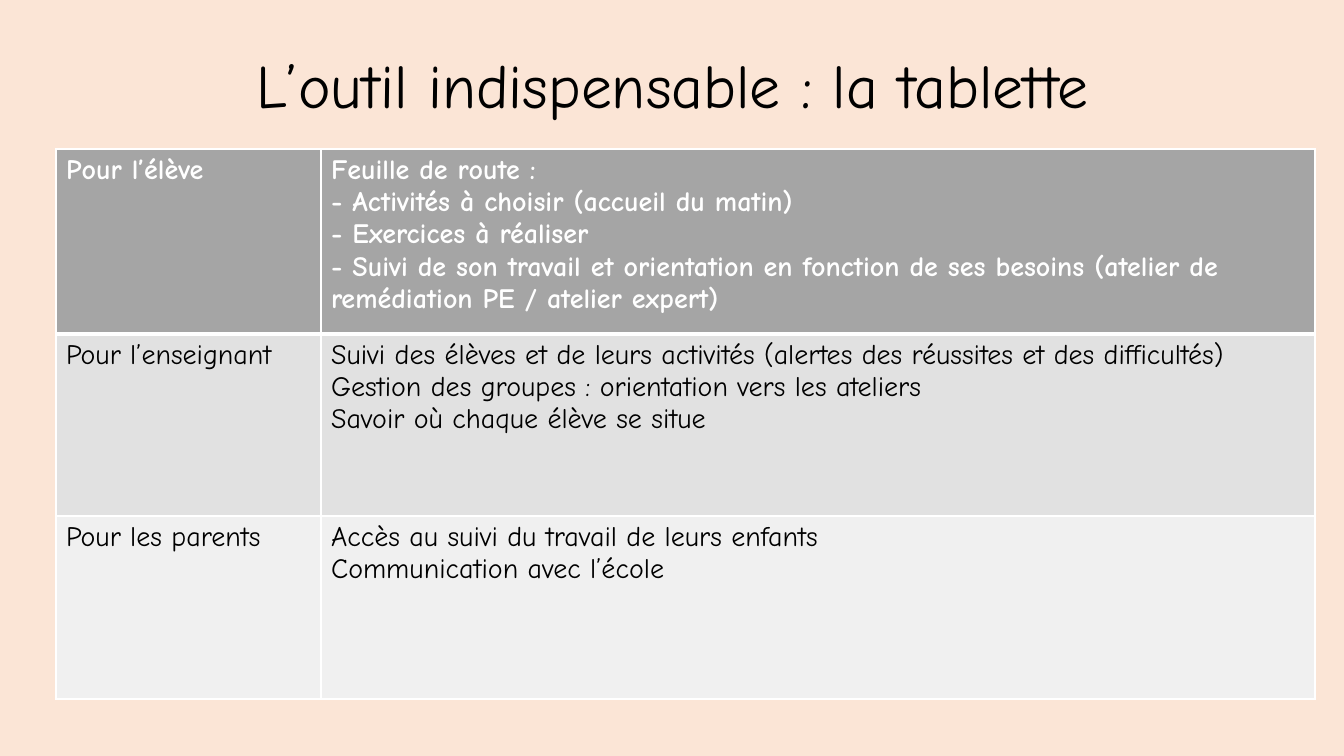
from lxml import etree
from pptx import Presentation
from pptx.dml.color import RGBColor
from pptx.enum.text import MSO_ANCHOR, PP_ALIGN
from pptx.oxml.ns import qn
from pptx.util import Pt

MIDDLE = MSO_ANCHOR.MIDDLE
CENTER = PP_ALIGN.CENTER
LEFT = PP_ALIGN.LEFT

TITLE = "L’outil indispensable : la tablette"
AUDIENCES = [
    ("Pour l’élève", [
        "Feuille de route :",
        "- Activités à choisir (accueil du matin)",
        "- Exercices à réaliser",
        "- Suivi de son travail et orientation en fonction de ses besoins "
        "(atelier de remédiation PE / atelier expert)",
    ]),
    ("Pour l’enseignant", [
        "Suivi des élèves et de leurs activités (alertes des réussites et des difficultés)",
        "Gestion des groupes : orientation vers les ateliers",
        "Savoir où chaque élève se situe",
    ]),
    ("Pour les parents", [
        "Accès au suivi du travail de leurs enfants",
        "Communication avec l’école",
    ]),
]
FONT = "Comic Neue"
BACKGROUND, BLACK, WHITE = "FBE5D6", "000000", "FFFFFF"
ROW_FILLS = ["A5A5A5", "E1E1E1", "F0F0F0"]
COLUMN_WIDTHS = [265, 994]
ROW_HEIGHTS = [185, 182, 183]
TABLE_LEFT, TABLE_TOP = 56, 149
EMU_PER_PX = 914400 / 100.8


def px(length):
    return round(length * EMU_PER_PX)


def color(value):
    return RGBColor.from_string(value)


def write(frame, lines, size=20, ink=BLACK, bold=False, align=LEFT, spacing=1.0):
    for index, line in enumerate(lines):
        para = frame.add_paragraph() if index else frame.paragraphs[0]
        para.alignment = align
        para.line_spacing = spacing
        span = para.add_run()
        span.text = line
        span.font.name = FONT
        span.font.size = Pt(size)
        span.font.bold = bold
        span.font.color.rgb = color(ink)


def add_borders(cell, widths):
    properties = cell._tc.get_or_add_tcPr()
    for side, width in widths.items():
        line = etree.SubElement(properties, qn(f"a:ln{side}"), w=str(Pt(width)))
        fill = etree.SubElement(line, qn("a:solidFill"))
        etree.SubElement(fill, qn("a:srgbClr"), val=WHITE)


deck = Presentation()
deck.slide_width, deck.slide_height = px(1344), px(756)
page = deck.slides.add_slide(deck.slide_layouts[5])
page.background.fill.solid()
page.background.fill.fore_color.rgb = color(BACKGROUND)

title = page.shapes.title
title.left, title.top, title.width, title.height = px(93), px(16), px(1159), px(146)
title.text_frame.vertical_anchor = MIDDLE
write(title.text_frame, [TITLE], size=44, align=CENTER, spacing=0.9)

table = page.shapes.add_table(
    len(ROW_HEIGHTS), len(COLUMN_WIDTHS), px(TABLE_LEFT), px(TABLE_TOP),
    px(sum(COLUMN_WIDTHS)), px(sum(ROW_HEIGHTS))).table
for column, width in zip(table.columns, COLUMN_WIDTHS):
    column.width = px(width)
for row, height in zip(table.rows, ROW_HEIGHTS):
    row.height = px(height)

for index, (audience, uses) in enumerate(AUDIENCES):
    header = index == 0
    borders = {"L": 1, "R": 1, "T": 3 if index == 1 else 1, "B": 3 if header else 1}
    for cell, lines in zip(table.rows[index].cells, ([audience], uses)):
        add_borders(cell, borders)
        cell.fill.solid()
        cell.fill.fore_color.rgb = color(ROW_FILLS[index])
        write(cell.text_frame, lines, ink=WHITE if header else BLACK, bold=header)

deck.save("out.pptx")
